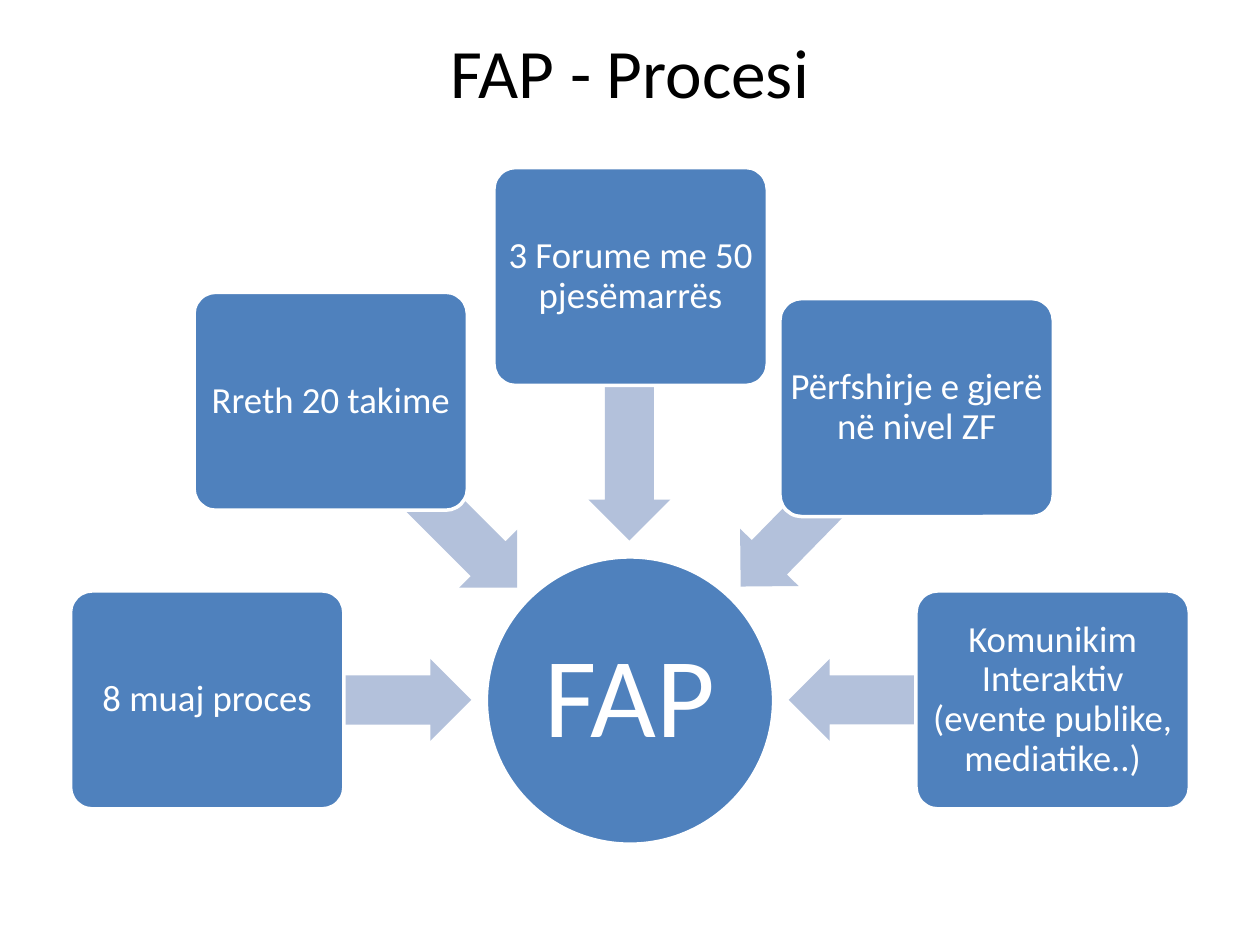
from pptx import Presentation
from pptx import util as u
from pptx.dml.color import RGBColor
from pptx.enum import shapes, text

COLORS = {"blue": "4F81BD", "pale": "B3C1DB", "white": "FFFFFF", "black": "000000"}
FONT = "Calibri"
BOX_WIDTH, BOX_HEIGHT = 2.17, 1.73
ARROW_HEIGHT = 0.65

# Box label, box left and top, arrow left, top, length and rotation
STEPS = [
    ("8 muaj proces", 0.56, 4.69, 1.65, 5.23, 2.09, 180),
    ("Rreth 20 takime", 1.54, 2.32, 2.32, 3.6, 2.09, 225),
    ("3 Forume me 50 pjesëmarrës", 3.92, 1.33, 3.95, 2.92, 2.09, 270),
    ("Përfshirje e gjerë në nivel ZF", 6.19, 2.37, 5.58, 3.62, 1.99, 314.4),
    ("Komunikim Interaktiv (evente publike, mediatike..)",
     7.27, 4.69, 6.26, 5.23, 2.09, 0),
]


def color(name):
    return RGBColor.from_string(COLORS[name])


def write(shape, words, size, ink, line_spacing=1.0, margin=0):
    """Put one centred paragraph in the middle of a shape."""
    frame = shape.text_frame
    frame.word_wrap = True
    frame.vertical_anchor = text.MSO_ANCHOR.MIDDLE
    frame.margin_left = frame.margin_right = u.Inches(margin)
    frame.margin_top = frame.margin_bottom = u.Inches(margin)
    para = frame.paragraphs[0]
    para.alignment = text.PP_ALIGN.CENTER
    para.line_spacing = line_spacing
    span = para.add_run()
    span.text = words
    span.font.name = FONT
    span.font.size = u.Pt(size)
    span.font.color.rgb = color(ink)


def add_block(page, kind, left, top, width, height, fill, outlined=True):
    block = page.shapes.add_shape(
        kind, u.Inches(left), u.Inches(top), u.Inches(width), u.Inches(height))
    block.shadow.inherit = False
    block.fill.solid()
    block.fill.fore_color.rgb = color(fill)
    if outlined:
        block.line.color.rgb = color("white")
        block.line.width = u.Pt(2)
    else:
        block.line.fill.background()
    return block


def add_arrow(page, left, top, length, rotation):
    arrow = add_block(page, shapes.MSO_SHAPE.LEFT_ARROW, left, top,
                      length, ARROW_HEIGHT, "pale", outlined=False)
    arrow.adjustments[0] = 0.6
    arrow.adjustments[1] = 0.5
    arrow.rotation = rotation


def add_step(page, label, left, top):
    box = add_block(page, shapes.MSO_SHAPE.ROUNDED_RECTANGLE, left, top,
                    BOX_WIDTH, BOX_HEIGHT, "blue")
    box.adjustments[0] = 0.1
    write(box, label, 21, "white", line_spacing=0.9)


def add_hub(page):
    hub = add_block(page, shapes.MSO_SHAPE.OVAL, 3.86, 4.42, 2.28, 2.28, "blue")
    write(hub, "FAP", 65, "white", line_spacing=0.9, margin=0.05)


def add_title(page):
    title = page.shapes.add_textbox(
        u.Inches(0.5), u.Inches(0.25), u.Inches(9), u.Inches(0.62))
    write(title, "FAP - Procesi", 39.6, "black", margin=0.05)


def main():
    deck = Presentation()
    deck.slide_width, deck.slide_height = u.Inches(10), u.Inches(7.5)
    page = deck.slides.add_slide(deck.slide_layouts[6])

    # Central circle, then each arrow with its box on top
    add_hub(page)
    for label, left, top, *arrow in STEPS:
        add_arrow(page, *arrow)
        add_step(page, label, left, top)

    # Heading
    add_title(page)
    deck.save("out.pptx")


if __name__ == "__main__":
    main()
